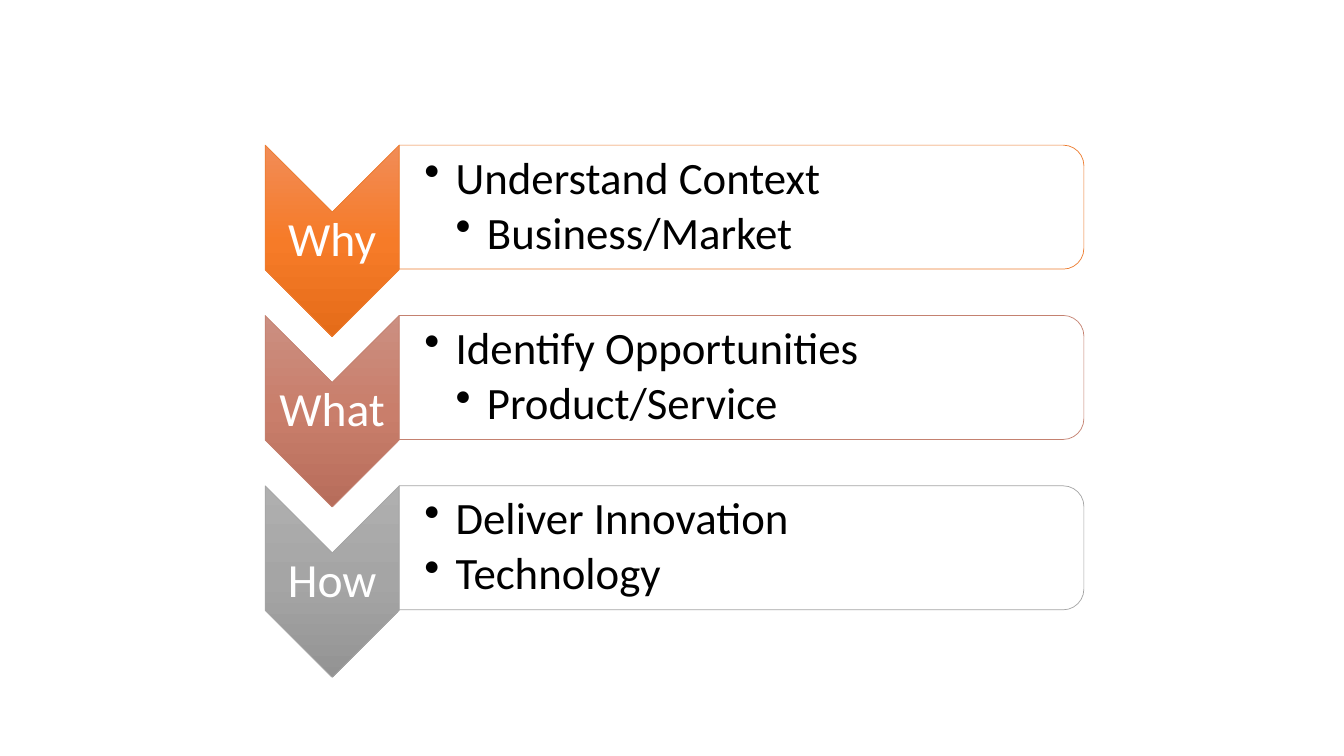
from lxml import etree
from pptx import Presentation
from pptx import util as u
from pptx.dml.color import RGBColor
from pptx.enum import shapes, text
from pptx.oxml import parse_xml
from pptx.oxml.ns import nsdecls, qn

WHITE = RGBColor(0xFF, 0xFF, 0xFF)
BLACK = RGBColor(0x00, 0x00, 0x00)
ORANGE = RGBColor(0xED, 0x7D, 0x31)
ROSE = RGBColor(0xC4, 0x81, 0x70)
GRAY = RGBColor(0xA5, 0xA5, 0xA5)
ORANGE_FADE = [RGBColor(0xF1, 0x8C, 0x57), RGBColor(0xF6, 0x7B, 0x28), RGBColor(0xE5, 0x6C, 0x19)]
ROSE_FADE = [RGBColor(0xCB, 0x8F, 0x81), RGBColor(0xC9, 0x7E, 0x6B), RGBColor(0xB7, 0x6D, 0x5B)]
GRAY_FADE = [RGBColor(0xAF, 0xAF, 0xAF), RGBColor(0xA5, 0xA5, 0xA5), RGBColor(0x93, 0x93, 0x93)]

# Each step: label, outline, gradient, list of (level, wording)
STEPS = [
    ("Why", ORANGE, ORANGE_FADE, [(1, "Understand Context"), (2, "Business/Market")]),
    ("What", ROSE, ROSE_FADE, [(1, "Identify Opportunities"), (2, "Product/Service")]),
    ("How", GRAY, GRAY_FADE, [(1, "Deliver Innovation"), (1, "Technology")]),
]
LEFT, TOP, STEP_PITCH = 2.63, 1.44, 1.69
CHEVRON_WIDTH, CHEVRON_HEIGHT = 1.33, 1.9
PANEL_WIDTH, PANEL_HEIGHT = 6.79, 1.23
INDENT = 0.31

LABEL_FONT = {"size": u.Pt(34), "name": "Calibri"}
LIST_FONT = {"size": u.Pt(32), "name": "Calibri"}
LABEL_PARA = {"alignment": text.PP_ALIGN.CENTER, "line_spacing": 0.9, "space_after": u.Pt(12)}
LIST_PARA = {"line_spacing": 0.9, "space_after": u.Pt(4.8)}


def apply_format(target, values):
    for name, value in values.items():
        setattr(target, name, value)


def add_turned_shape(page, kind, left, top, width, height, outline):
    """Add a shape turned a quarter clockwise that covers the given box."""
    shift = (width - height) / 2
    shape = page.shapes.add_shape(kind, u.Inches(left + shift), u.Inches(top - shift),
                                  u.Inches(height), u.Inches(width))
    shape.rotation = 90
    shape.shadow.inherit = False
    shape.line.color.rgb = outline
    shape.line.width = u.Pt(0.5)
    return shape


def fill_downward(shape, colors):
    stops = "".join(f'<a:gs pos="{index * 50000}"><a:srgbClr val="{color}"/></a:gs>'
                    for index, color in enumerate(colors))
    gradient = parse_xml(f'<a:gradFill {nsdecls("a")} rotWithShape="0"><a:gsLst>{stops}</a:gsLst>'
                         '<a:lin ang="5400000" scaled="0"/></a:gradFill>')
    shape.element.spPr.find(qn("a:prstGeom")).addnext(gradient)


def add_text_frame(page, left, top, width, height, left_margin=0.02):
    box = page.shapes.add_textbox(*map(u.Inches, (left, top, width, height)))
    margin = u.Inches(0.02)
    apply_format(box.text_frame, {
        "word_wrap": True, "vertical_anchor": text.MSO_ANCHOR.MIDDLE,
        "margin_left": u.Inches(left_margin), "margin_right": margin,
        "margin_top": margin, "margin_bottom": margin})
    return box.text_frame


def write(para, wording, para_format, font_format, color):
    apply_format(para, para_format)
    span = para.add_run()
    span.text = wording
    apply_format(span.font, font_format)
    span.font.color.rgb = color


def add_bullet(para, level):
    para.level = level
    props = para._p.get_or_add_pPr()
    props.set("marL", str(u.Inches(INDENT * level)))
    props.set("indent", str(u.Inches(-INDENT)))
    etree.SubElement(props, qn("a:buChar")).set("char", "•")


def add_chevron(page, left, top, label, outline, fade):
    chevron = add_turned_shape(page, shapes.MSO_SHAPE.CHEVRON, left, top,
                               CHEVRON_WIDTH, CHEVRON_HEIGHT, outline)
    fill_downward(chevron, fade)
    # The label sits between the notch and the shoulders
    notch = CHEVRON_WIDTH / 2
    frame = add_text_frame(page, left, top + notch, CHEVRON_WIDTH, CHEVRON_HEIGHT - 2 * notch)
    write(frame.paragraphs[0], label, LABEL_PARA, LABEL_FONT, WHITE)


def add_panel(page, left, top, outline, items):
    panel = add_turned_shape(page, shapes.MSO_SHAPE.ROUND_2_SAME_RECTANGLE, left, top,
                             PANEL_WIDTH, PANEL_HEIGHT, outline)
    panel.fill.solid()
    panel.fill.fore_color.rgb = WHITE
    color = panel.element.spPr.find(qn("a:solidFill")).find(qn("a:srgbClr"))
    etree.SubElement(color, qn("a:alpha")).set("val", "90000")
    # Bulleted list
    inset = 0.06
    frame = add_text_frame(page, left, top + inset, PANEL_WIDTH - inset,
                           PANEL_HEIGHT - 2 * inset, left_margin=0.25)
    for index, (level, wording) in enumerate(items):
        para = frame.add_paragraph() if index else frame.paragraphs[0]
        write(para, wording, LIST_PARA, LIST_FONT, BLACK)
        add_bullet(para, level)


def add_steps(page, left, top):
    for index, (label, outline, fade, items) in enumerate(STEPS):
        row_top = top + index * STEP_PITCH
        add_chevron(page, left, row_top, label, outline, fade)
        add_panel(page, left + CHEVRON_WIDTH, row_top, outline, items)


def main():
    deck = Presentation()
    deck.slide_width, deck.slide_height = u.Inches(13.33), u.Inches(7.5)
    page = deck.slides.add_slide(deck.slide_layouts[6])
    add_steps(page, LEFT, TOP)
    deck.save("out.pptx")


if __name__ == "__main__":
    main()
